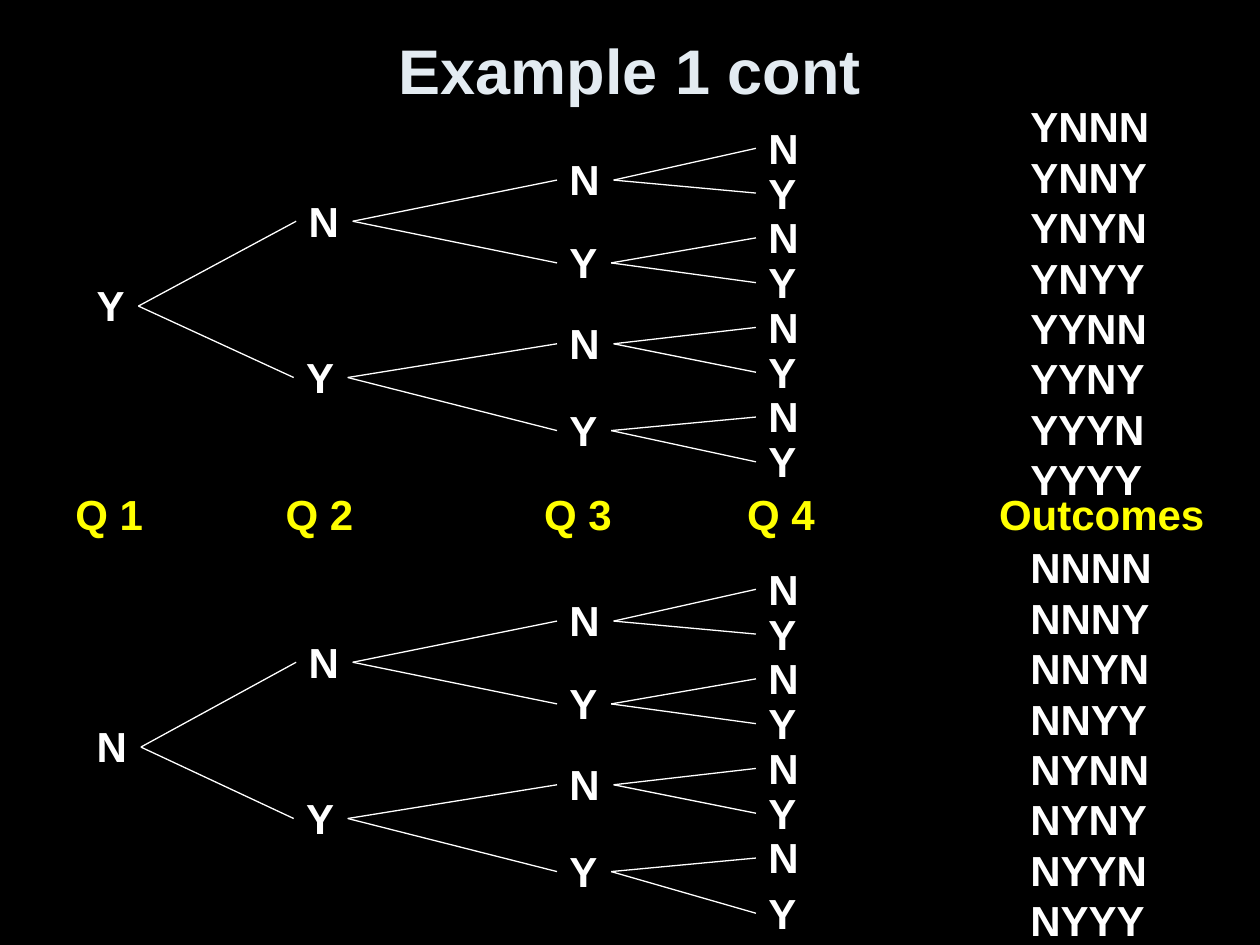
from dataclasses import dataclass
from itertools import product

from lxml.etree import SubElement
from pptx import Presentation
from pptx.dml.color import RGBColor
from pptx.enum.shapes import MSO_CONNECTOR
from pptx.enum.text import MSO_ANCHOR, MSO_AUTO_SIZE, PP_ALIGN
from pptx.oxml.ns import qn
from pptx.util import Cm, Pt


@dataclass(frozen=True)
class Theme:
    background: RGBColor = RGBColor(0x00, 0x00, 0x00)
    title: RGBColor = RGBColor(0xE3, 0xEB, 0xF1)
    heading: RGBColor = RGBColor(0xFF, 0xFF, 0x00)
    node: RGBColor = RGBColor(0xFF, 0xFF, 0xFF)
    font: str = "Arial"
    title_size: Pt = Pt(36)
    text_size: Pt = Pt(24)
    line_spacing: Pt = Pt(28.8)
    branch_width: Pt = Pt(0.75)


@dataclass(frozen=True)
class Box:
    left: float
    top: float
    width: float
    height: float


THEME = Theme()
LABEL_HEIGHT = 1.3
LETTER_WIDTHS = {"N": 1.14, "Y": 1.09}
COLUMN_LEFTS = (
    {"N": 0, "Y": 0},
    {"N": 4.27, "Y": 4.22},
    {"N": 9.53, "Y": 9.53},
    {"N": 13.54, "Y": 13.54},
)
INNER_TOPS = ([3.18], [1.47, 4.62], [0.64, 2.31, 3.94, 5.69])
LEAF_COUNT = 8
LEAF_SPAN = 6.32


def style_paragraph(paragraph, size, color):
    paragraph.font.name = THEME.font
    paragraph.font.size = size
    paragraph.font.bold = True
    paragraph.font.color.rgb = color


def add_label(slide, box, lines, color):
    shape = slide.shapes.add_textbox(
        Cm(box.left), Cm(box.top), Cm(box.width), Cm(box.height)
    )
    frame = shape.text_frame
    frame.word_wrap = False
    frame.auto_size = MSO_AUTO_SIZE.SHAPE_TO_FIT_TEXT
    frame.text = "\n".join(lines)
    for paragraph in frame.paragraphs:
        paragraph.line_spacing = THEME.line_spacing
        style_paragraph(paragraph, THEME.text_size, color)


def add_branch(slide, parent, child):
    connector = slide.shapes.add_connector(
        MSO_CONNECTOR.STRAIGHT,
        Cm(parent.left + parent.width),
        Cm(parent.top + parent.height / 2),
        Cm(child.left),
        Cm(child.top + child.height / 2),
    )
    connector.line.color.rgb = THEME.node
    connector.line.width = THEME.branch_width
    SubElement(connector._element.spPr, qn("a:effectLst"))


def add_title(slide, box):
    title = slide.shapes.title
    title.left, title.top = Cm(box.left), Cm(box.top)
    title.width, title.height = Cm(box.width), Cm(box.height)
    title.text_frame.text = "Example 1 cont"
    title.text_frame.vertical_anchor = MSO_ANCHOR.MIDDLE
    paragraph = title.text_frame.paragraphs[0]
    paragraph.alignment = PP_ALIGN.CENTER
    style_paragraph(paragraph, THEME.title_size, THEME.title)


def add_headings(slide, box):
    question_offsets = (0, 4.24, 9.45, 13.54)
    for number, offset in enumerate(question_offsets, start=1):
        label = Box(box.left + offset, box.top, 1.88, box.height)
        add_label(slide, label, [f"Q {number}"], THEME.heading)
    outcomes_width = 4.7
    right = box.left + box.width
    outcomes = Box(right - outcomes_width, box.top, outcomes_width, box.height)
    add_label(slide, outcomes, ["Outcomes"], THEME.heading)


def add_tree(slide, box, root, last_leaf_drop=0):
    leaf_tops = [LEAF_SPAN / (LEAF_COUNT - 1) * index for index in range(LEAF_COUNT)]
    leaf_tops[-1] += last_leaf_drop
    parents = []
    for lefts, tops in zip(COLUMN_LEFTS, (*INNER_TOPS, leaf_tops)):
        nodes = []
        for index, top in enumerate(tops):
            letter = "NY"[index % 2] if parents else root
            node = Box(
                box.left + lefts[letter],
                box.top + top,
                LETTER_WIDTHS[letter],
                LABEL_HEIGHT,
            )
            add_label(slide, node, [letter], THEME.node)
            if parents:
                add_branch(slide, parents[index // 2], node)
            nodes.append(node)
        parents = nodes


def add_outcomes(slide, box, root):
    outcomes = [root + "".join(answers) for answers in product("NY", repeat=3)]
    add_label(slide, box, outcomes, THEME.node)


def main():
    presentation = Presentation()
    presentation.slide_width = Cm(25.4)
    presentation.slide_height = Cm(19.05)
    slide = presentation.slides.add_slide(presentation.slide_layouts[5])
    slide.background.fill.solid()
    slide.background.fill.fore_color.rgb = THEME.background

    add_title(slide, Box(1.27, 0.2, 22.86, 2.41))
    add_headings(slide, Box(1.27, 9.73, 23.32, LABEL_HEIGHT))
    for root, top, last_leaf_drop in (("Y", 2.34, 0), ("N", 11.23, 0.21)):
        add_tree(slide, Box(1.7, top, 14.68, 7.62), root, last_leaf_drop)
        add_outcomes(slide, Box(20.52, top - 0.43, 2.97, 8.46), root)
    presentation.save("out.pptx")


if __name__ == "__main__":
    main()
